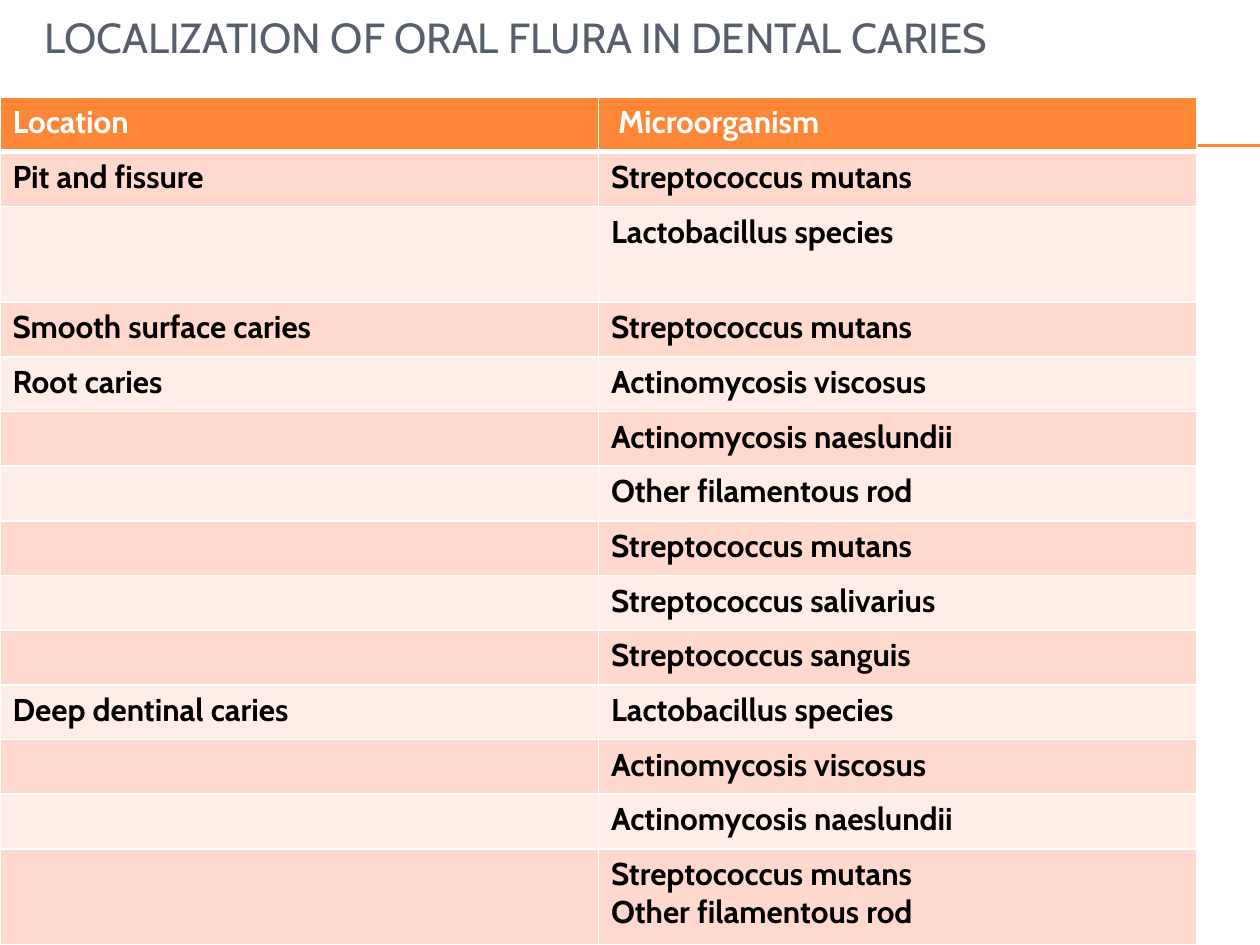
from lxml.etree import SubElement
from pptx import Presentation
from pptx.dml.color import RGBColor
from pptx.enum.shapes import MSO_CONNECTOR
from pptx.enum.text import MSO_ANCHOR, PP_ALIGN
from pptx.oxml.ns import qn
from pptx.util import Inches, Pt

ORANGE, WHITE = "FE8637", "FFFFFF"
BANDS = ["FFD9CE", "FFEDE8"]
TALL, HIGH = 0.76, 6.73
ROWS = [
    ("Location", " Microorganism"),
    ("Pit and fissure", "Streptococcus mutans"),
    ("", "Lactobacillus species"),
    ("Smooth surface caries", "Streptococcus mutans"),
    ("Root caries", "Actinomycosis viscosus"),
    ("", "Actinomycosis naeslundii"),
    ("", "Other filamentous rod"),
    ("", "Streptococcus mutans"),
    ("", "Streptococcus salivarius"),
    ("", "Streptococcus sanguis"),
    ("Deep dentinal caries", "Lactobacillus species"),
    ("", "Actinomycosis viscosus"),
    ("", "Actinomycosis naeslundii"),
    ("", "Streptococcus mutans\nOther filamentous rod"),
]
TALL_ROWS = {2, 13}


def color(code):
    return RGBColor.from_string(code)


def style(item, values):
    for name, value in values.items():
        setattr(item, name, value)


def set_font(frame, size, code, bold):
    for para in frame.paragraphs:
        style(para.font, {"name": "Cabin", "size": Pt(size), "bold": bold})
        para.font.color.rgb = color(code)
        for run in para.runs:
            style(run.font, {"name": "Cabin", "size": Pt(size), "bold": bold})
            run.font.color.rgb = color(code)


def add_rule(slide, y):
    rule = slide.shapes.add_connector(
        MSO_CONNECTOR.STRAIGHT, Inches(0.56), Inches(y), Inches(10), Inches(y))
    rule.line.color.rgb = color(ORANGE)
    rule.line.width = Pt(0.75)
    SubElement(rule._element.spPr, qn("a:effectLst"))


def set_title(slide, text):
    title = slide.shapes.title
    style(title, {"left": Inches(0.25), "top": Inches(-0.17),
                  "width": Inches(9.5), "height": Inches(0.92)})
    frame = title.text_frame
    frame.text = text
    style(frame, {"vertical_anchor": MSO_ANCHOR.MIDDLE, "word_wrap": True})
    frame.paragraphs[0].alignment = PP_ALIGN.LEFT
    set_font(frame, 24, "575F6D", False)


def set_edges(cell, widths):
    props = cell._tc.get_or_add_tcPr()
    for side, width in widths.items():
        edge = SubElement(props, qn(f"a:ln{side}"), w=str(Pt(width)))
        fill = SubElement(edge, qn("a:solidFill"))
        SubElement(fill, qn("a:srgbClr"), val=WHITE)


def fill_cell(cell, text, row):
    head = row == 0
    below = 3 if head else 1
    above = 3 if row == 1 else 1
    set_edges(cell, {"L": 1, "R": 1, "T": above, "B": below})
    cell.fill.solid()
    cell.fill.fore_color.rgb = color(ORANGE if head else BANDS[(row - 1) % 2])
    cell.text = text
    set_font(cell.text_frame, 18, WHITE if head else "000000", True)


def add_grid(slide):
    grid = slide.shapes.add_table(
        len(ROWS), 2, 0, Inches(0.77), Inches(9.5), Inches(HIGH)).table
    low = (HIGH - TALL * len(TALL_ROWS)) / (len(ROWS) - len(TALL_ROWS))
    for row, texts in enumerate(ROWS):
        grid.rows[row].height = Inches(TALL if row in TALL_ROWS else low)
        for col, text in enumerate(texts):
            fill_cell(grid.cell(row, col), text, row)


def main():
    deck = Presentation()
    style(deck, {"slide_width": Inches(10), "slide_height": Inches(7.5)})
    slide = deck.slides.add_slide(deck.slide_layouts[5])
    for y in (1.15, 1.16):
        add_rule(slide, y)
    set_title(slide, "LOCALIZATION OF ORAL FLURA IN DENTAL CARIES")
    add_grid(slide)
    deck.save("out.pptx")


if __name__ == "__main__":
    main()
